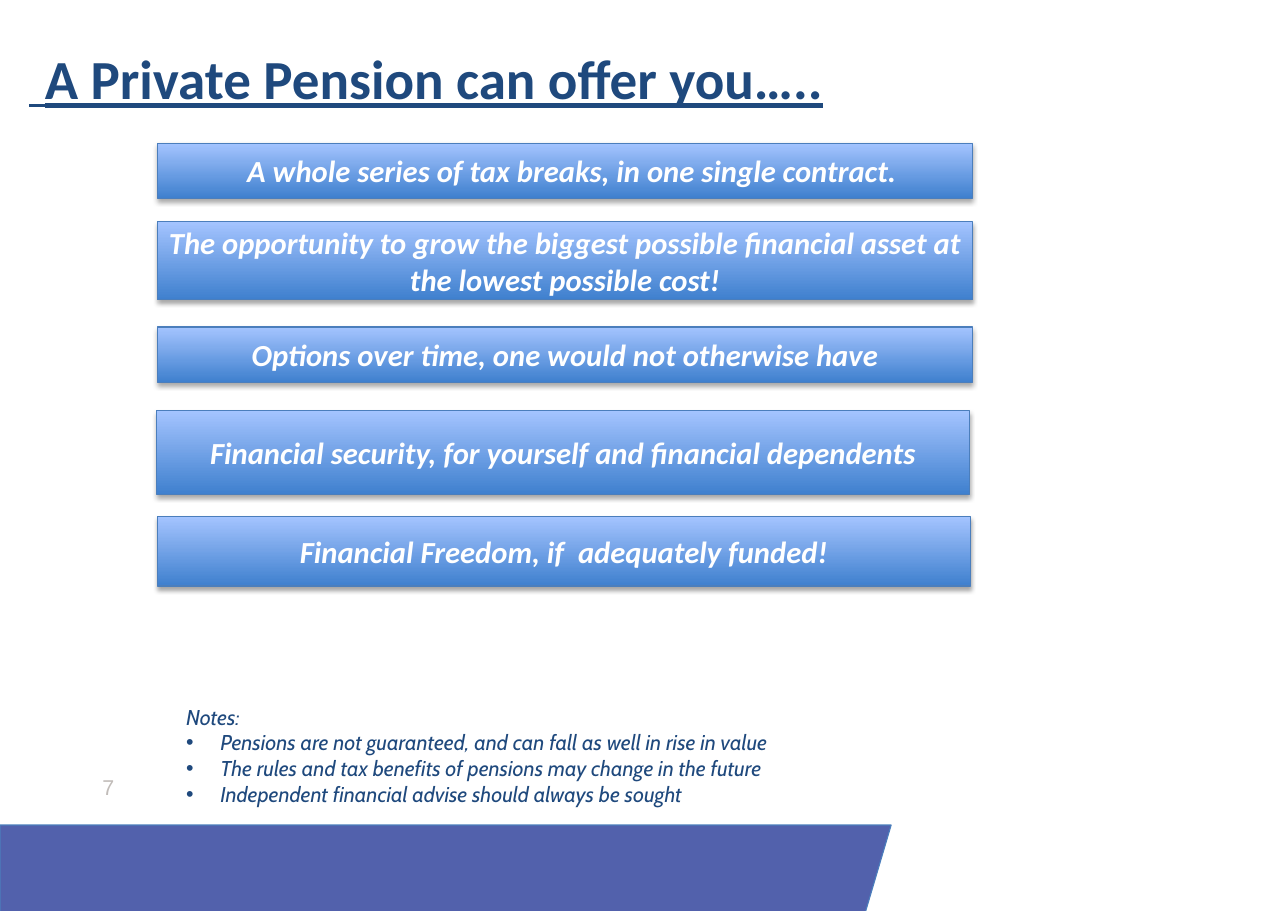
from lxml import etree
from pptx import Presentation
from pptx import util as u
from pptx.dml.color import RGBColor
from pptx.enum import shapes, text
from pptx.oxml import ns

Cm, Pt = u.Cm, u.Pt

COLORS = {
    "navy": "1F497D",
    "white": "FFFFFF",
    "grey": "C1BCB9",
    "footer": "5261AC",
    "outline": "4B7EBC",
    "bar_bottom": "3F80CE",
    "bar_top": "A4C4FF",
    "shadow": "000000",
}

# left, top, width, height in cm, and the words
BENEFITS = [
    (3.63, 3.3, 18.8, 1.27, "A whole series of tax breaks, in one single contract."),
    (3.63, 5.11, 18.8, 1.8, "The opportunity to grow the biggest possible financial asset "
                            "at the lowest possible cost!"),
    (3.63, 7.54, 18.8, 1.27, "Options over time, one would not otherwise have"),
    (3.61, 9.47, 18.75, 1.93, "Financial security, for yourself and financial dependents"),
    (3.63, 11.91, 18.75, 1.6, "Financial Freedom, if  adequately funded!"),
]

NOTES = [
    "Pensions are not guaranteed, and can fall as well in rise in value",
    "The rules and tax benefits of pensions may change in the future",
    "Independent financial advise should always be sought",
]


def rgb(name):
    return RGBColor.from_string(COLORS[name])


def add_element(parent, tag, **attributes):
    return etree.SubElement(parent, ns.qn(tag), attributes)


class PensionSlide:
    def __init__(self, presentation):
        self.slide = presentation.slides.add_slide(presentation.slide_layouts[6])

    def style_run(self, run, font, size, color, bold=False, italic=False, underline=False):
        run.font.name = font
        run.font.size = Pt(size)
        run.font.color.rgb = rgb(color)
        run.font.bold = bold
        run.font.italic = italic
        run.font.underline = underline

    def outline(self, shape):
        shape.line.color.rgb = rgb("outline")
        shape.line.width = Pt(0.75)

    def text_box(self, left, top, width, height, wrap=True):
        box = self.slide.shapes.add_textbox(Cm(left), Cm(top), Cm(width), Cm(height))
        box.text_frame.word_wrap = wrap
        return box.text_frame

    def footer(self):
        corners = [(Cm(x), Cm(y)) for x, y in
                   [(0, 19.02), (20.55, 19.02), (19.94, 21.08), (0, 21.08)]]
        builder = self.slide.shapes.build_freeform(*corners[0])
        builder.add_line_segments(corners[1:], close=True)
        shape = builder.convert_to_shape()
        shape.shadow.inherit = False
        shape.fill.solid()
        shape.fill.fore_color.rgb = rgb("footer")
        self.outline(shape)

    def page_number(self, number):
        frame = self.text_box(2.08, 17.7, 1.19, 0.89, wrap=False)
        frame.margin_left = frame.margin_right = Cm(0.28)
        frame.margin_top = frame.margin_bottom = Cm(0.15)
        frame.text = number
        self.style_run(frame.paragraphs[0].runs[0], "Arial", 14, "grey")

    def title(self, words):
        """Underlined heading, led in by one underlined Arial space."""
        paragraph = self.text_box(0.43, 0.91, 28.8, 2.82).paragraphs[0]
        for part, font in ((" ", "Arial"), (words, "Calibri")):
            run = paragraph.add_run()
            run.text = part
            self.style_run(run, font, 36, "navy", bold=True, underline=True)

    def soft_shadow(self, shape):
        shape.shadow.inherit = False
        effects = shape._element.spPr.find(ns.qn("a:effectLst"))
        shadow = add_element(effects, "a:outerShdw", blurRad=str(Pt(3.1)),
                             dist=str(Pt(1.8)), dir="5400000", rotWithShape="0")
        color = add_element(shadow, "a:srgbClr", val=COLORS["shadow"])
        add_element(color, "a:alpha", val="35000")

    def bar(self, left, top, width, height, words):
        shape = self.slide.shapes.add_shape(
            shapes.MSO_SHAPE.RECTANGLE, Cm(left), Cm(top), Cm(width), Cm(height))
        shape.fill.gradient()
        shape.fill.gradient_angle = 90
        for stop, color in zip(shape.fill.gradient_stops, ("bar_bottom", "bar_top")):
            stop.color.rgb = rgb(color)
        self.outline(shape)
        self.soft_shadow(shape)
        frame = shape.text_frame
        frame.word_wrap = True
        frame.vertical_anchor = text.MSO_ANCHOR.MIDDLE
        frame.text = words
        paragraph = frame.paragraphs[0]
        paragraph.alignment = text.PP_ALIGN.CENTER
        self.style_run(paragraph.runs[0], "Calibri", 20, "white", bold=True, italic=True)
        return shape

    def notes(self, heading, items):
        frame = self.text_box(4.04, 16.1, 18.39, 3.84)
        frame.text = "\n".join([heading, *items])
        for paragraph in frame.paragraphs[1:]:
            properties = paragraph._p.get_or_add_pPr()
            properties.set("marL", str(Cm(0.79)))
            properties.set("indent", str(Cm(-0.79)))
            add_element(properties, "a:buFont", typeface="Arial")
            add_element(properties, "a:buChar", char="•")
        for paragraph in frame.paragraphs:
            self.style_run(paragraph.runs[0], "Cabin", 14, "navy", italic=True)


def main():
    presentation = Presentation()
    presentation.slide_width = Cm(29.7)
    presentation.slide_height = Cm(21)
    page = PensionSlide(presentation)
    page.footer()
    page.page_number("7")
    page.title("A Private Pension can offer you…..")
    bars = [page.bar(*benefit) for benefit in BENEFITS]
    bars[0].text_frame.margin_left = Cm(0.57)
    page.notes("Notes:", NOTES)
    presentation.save("out.pptx")


if __name__ == "__main__":
    main()
